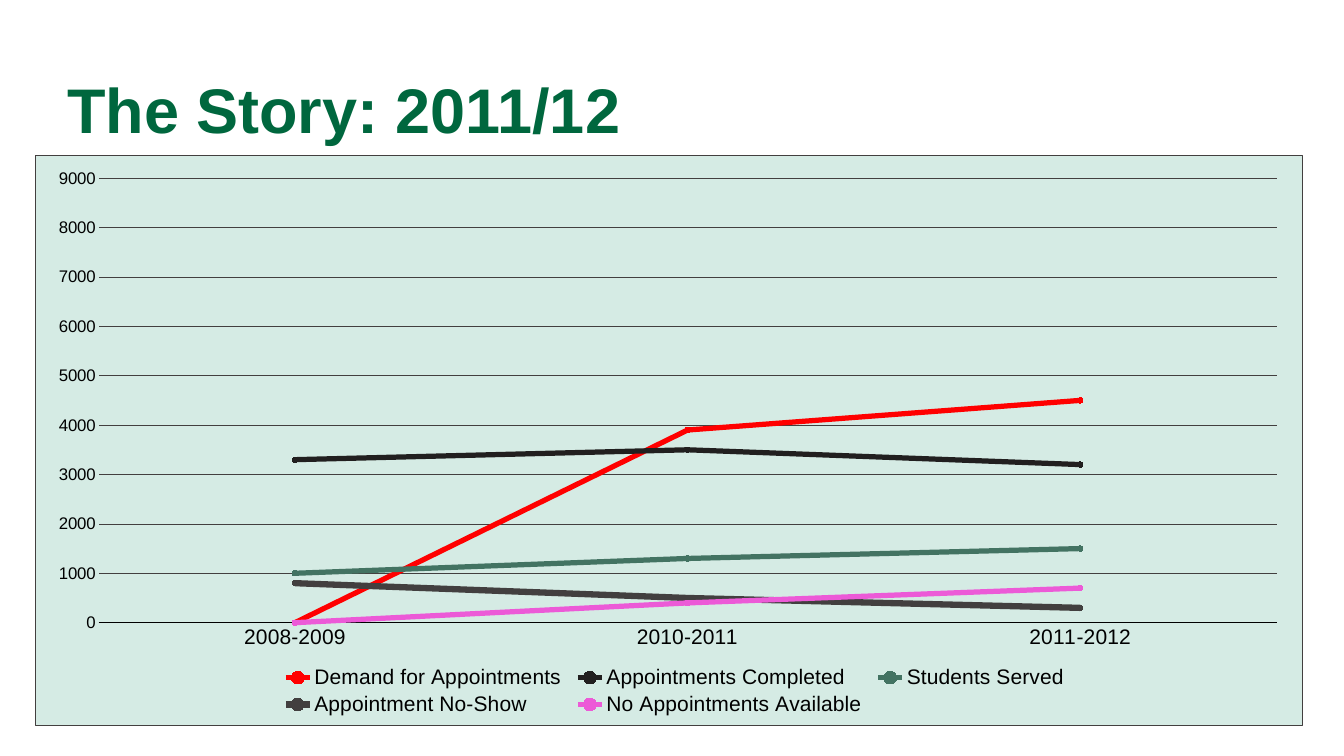
"""Build a slide with a line chart of appointment demand over three school years."""
from dataclasses import dataclass

from lxml import etree
from pptx import Presentation
from pptx import util as u
from pptx.chart.data import CategoryChartData
from pptx.dml.color import RGBColor
from pptx.enum import chart as ch, text
from pptx.oxml import parse_xml
from pptx.oxml.ns import nsdecls, qn

WIDTH, HEIGHT = u.Inches(17.78), u.Inches(10)
COLORS = {
    "title": "00673E", "text": "000000", "panel": "D5EBE4", "rule": "423F3F",
    "demand": "FF0000", "completed": "211F1F", "served": "437362",
    "no_show": "423F3F", "unavailable": "EC5AD7",
}
YEARS = ("2008-2009", "2010-2011", "2011-2012")


@dataclass(frozen=True)
class Measure:
    name: str
    values: tuple
    color: str
    weight: float = 5


@dataclass(frozen=True)
class Area:
    """A box given in shares of its container."""
    left: float
    top: float
    width: float
    height: float

    def on_slide(self) -> tuple:
        return (int(self.left * WIDTH), int(self.top * HEIGHT),
                int(self.width * WIDTH), int(self.height * HEIGHT))


MEASURES = (
    Measure("Demand for Appointments", (None, 3900, 4500), "demand"),
    Measure("Appointments Completed", (3300, 3500, 3200), "completed"),
    Measure("Students Served", (1000, 1300, 1500), "served"),
    Measure("Appointment No-Show", (800, 500, 300), "no_show", 6),
    Measure("No Appointments Available", (None, 400, 700), "unavailable"),
)
TITLE_AREA = Area(0.05, 0.073, 0.9, 0.16)
CHART_AREA = Area(0.026, 0.205, 0.943, 0.755)
PLOT_AREA = Area(0.05, 0.04, 0.93, 0.78)
LEGEND_AREA = Area(0.19, 0.89, 0.63, 0.1)


def rgb(name: str) -> RGBColor:
    return RGBColor.from_string(COLORS[name])


def style_font(font, size: float, color: str = "text", bold: bool = False) -> None:
    font.name, font.size, font.bold = "Arial", u.Pt(size), bold
    font.color.rgb = rgb(color)


def write(frame, words: str, size: float, color: str, bold: bool = False,
          spacing: float = 1, align=text.PP_ALIGN.LEFT) -> None:
    paragraph = frame.paragraphs[0]
    paragraph.alignment, paragraph.line_spacing = align, spacing
    run = paragraph.add_run()
    run.text = words
    style_font(run.font, size, color, bold)


def style_line(line, color: str, weight: float = 0.75) -> None:
    line.color.rgb = rgb(color)
    line.width = u.Pt(weight)


def place_part(part, area: Area, index: int, inner: bool = False) -> None:
    """Fix a chart part at shares of the chart's size."""
    for old in part.findall(qn("c:layout")):
        part.remove(old)
    layout = parse_xml(f"<c:layout {nsdecls('c')}><c:manualLayout/></c:layout>")
    settings = {"layoutTarget": "inner"} if inner else {}
    settings |= {"xMode": "edge", "yMode": "edge", "x": area.left, "y": area.top,
                 "w": area.width, "h": area.height}
    for tag, value in settings.items():
        etree.SubElement(layout[0], qn(f"c:{tag}")).set("val", str(value))
    part.insert(index, layout)


def style_panel(chart) -> None:
    """Fill and outline the chart, and draw empty values as zero."""
    body = chart._chartSpace.find(qn("c:chart"))
    body.addnext(parse_xml(
        f'<c:spPr {nsdecls("c", "a")}>'
        f'<a:solidFill><a:srgbClr val="{COLORS["panel"]}"/></a:solidFill>'
        f'<a:ln w="{u.Pt(0.75)}"><a:solidFill><a:srgbClr val="{COLORS["rule"]}"/>'
        '</a:solidFill></a:ln></c:spPr>'))
    body.find(qn("c:dispBlanksAs")).set("val", "zero")
    place_part(body.find(qn("c:plotArea")), PLOT_AREA, 0, inner=True)
    place_part(body.find(qn("c:legend")), LEGEND_AREA, 1)


def style_axes(chart) -> None:
    years, counts = chart.category_axis, chart.value_axis
    for axis, size in ((years, 20), (counts, 16)):
        axis.major_tick_mark = axis.minor_tick_mark = ch.XL_TICK_MARK.NONE
        style_font(axis.tick_labels.font, size)
    style_line(years.format.line, "text")
    counts.format.line.fill.background()
    counts.minimum_scale, counts.maximum_scale, counts.major_unit = 0, 9000, 1000
    counts.has_major_gridlines = True
    style_line(counts.major_gridlines.format.line, "rule")


def style_series(series, measure: Measure) -> None:
    series.smooth = False
    style_line(series.format.line, measure.color, measure.weight)
    marker = series.marker
    marker.style, marker.size = ch.XL_MARKER_STYLE.CIRCLE, 5
    marker.format.fill.solid()
    marker.format.fill.fore_color.rgb = rgb(measure.color)
    style_line(marker.format.line, measure.color)


def add_trends(slide) -> None:
    data = CategoryChartData()
    data.categories = YEARS
    for measure in MEASURES:
        data.add_series(measure.name, measure.values)
    chart = slide.shapes.add_chart(
        ch.XL_CHART_TYPE.LINE_MARKERS, *CHART_AREA.on_slide(), data).chart
    chart.has_title = False
    style_font(chart.font, 10, "rule")
    chart.has_legend = True
    chart.legend.position = ch.XL_LEGEND_POSITION.BOTTOM
    chart.legend.include_in_layout = False
    style_font(chart.legend.font, 20)
    style_axes(chart)
    chart.plots[0].vary_by_categories = False
    for series, measure in zip(chart.plots[0].series, MEASURES):
        style_series(series, measure)
    style_panel(chart)


def add_heading(slide, words: str) -> None:
    title = slide.shapes.title
    title.left, title.top, title.width, title.height = TITLE_AREA.on_slide()
    frame = title.text_frame
    frame.margin_left = frame.margin_right = frame.margin_top = frame.margin_bottom = 0
    frame.vertical_anchor = text.MSO_ANCHOR.MIDDLE
    frame.auto_size = text.MSO_AUTO_SIZE.NONE
    write(frame, words, 60, "title", bold=True, spacing=0.8)


def main() -> None:
    deck = Presentation()
    deck.slide_width, deck.slide_height = WIDTH, HEIGHT
    slide = deck.slides.add_slide(deck.slide_layouts[5])
    add_heading(slide, "The Story: 2011/12")
    add_trends(slide)
    deck.save("out.pptx")


if __name__ == "__main__":
    main()
